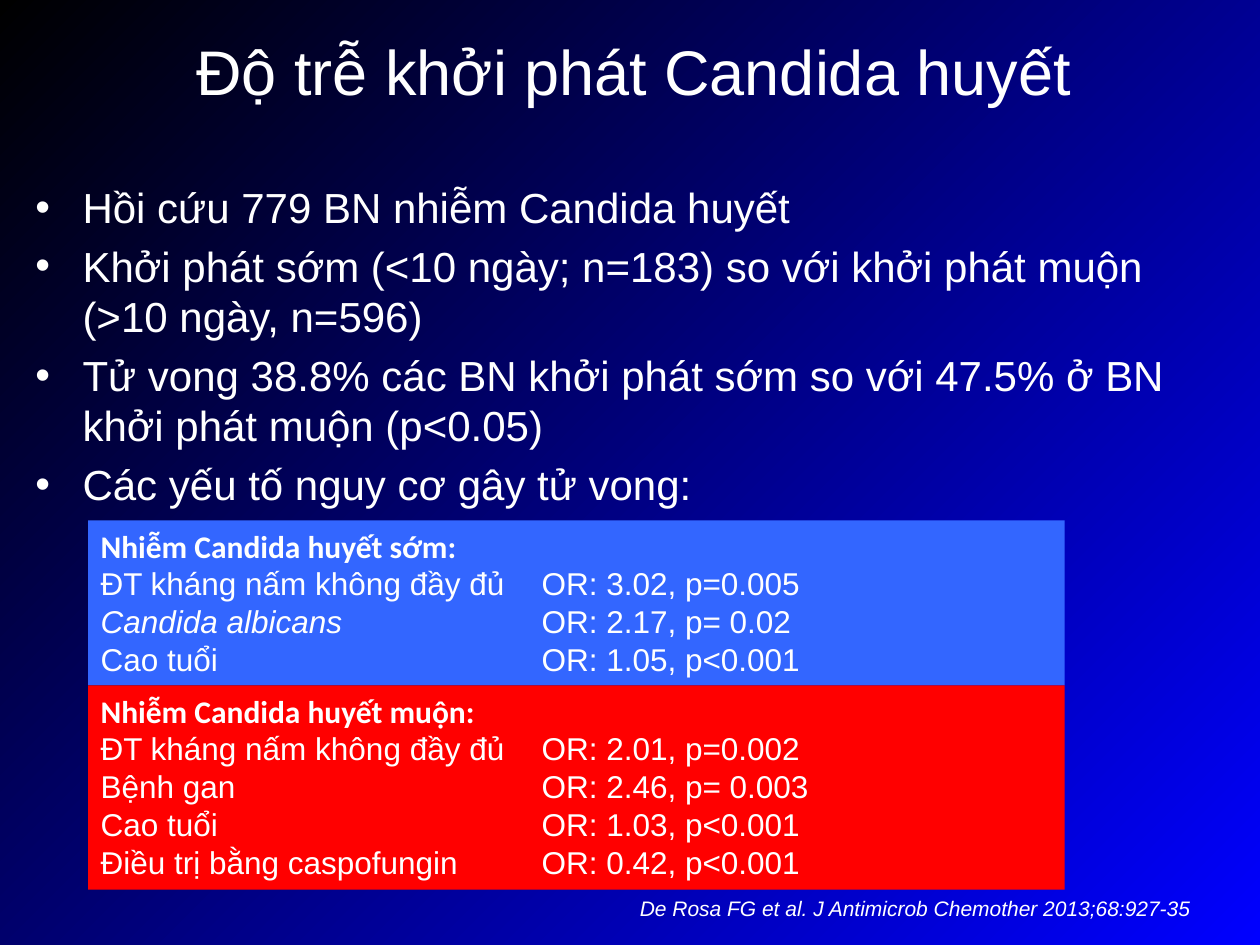
from dataclasses import dataclass

from lxml.etree import SubElement
from pptx import Presentation
from pptx.dml.color import RGBColor
from pptx.enum.shapes import MSO_SHAPE
from pptx.enum.text import MSO_ANCHOR, MSO_AUTO_SIZE, PP_ALIGN
from pptx.oxml import parse_xml
from pptx.oxml.ns import nsdecls, qn
from pptx.util import Inches, Pt

WIDTH, HEIGHT = 10, 7.5
COLORS = {"text": "FFFFFF", "early": "3366FF", "late": "FF0000",
          "glow": "0000FF", "dark": "000000"}
PANEL_LEFT, PANEL_WIDTH = 0.7, 7.75
PANEL_TOP = 4.13
ODDS_TAB = 3.5


@dataclass
class Factor:
    name: str
    odds: str
    italic: bool = False


@dataclass
class Panel:
    heading: str
    color: str
    height: float
    factors: list[Factor]


FINDINGS = [
    "Hồi cứu 779 BN nhiễm Candida huyết",
    "Khởi phát sớm (<10 ngày; n=183) so với khởi phát muộn (>10 ngày, n=596)",
    "Tử vong 38.8% các BN khởi phát sớm so với 47.5% ở BN khởi phát muộn (p<0.05)",
    "Các yếu tố nguy cơ gây tử vong:",
]
PANELS = [
    Panel("Nhiễm Candida huyết sớm:", "early", 1.31, [
        Factor("ĐT kháng nấm không đầy đủ", "OR: 3.02, p=0.005"),
        Factor("Candida albicans", "OR: 2.17, p= 0.02", italic=True),
        Factor("Cao tuổi", "OR: 1.05, p<0.001"),
    ]),
    Panel("Nhiễm Candida huyết muộn:", "late", 1.62, [
        Factor("ĐT kháng nấm không đầy đủ", "OR: 2.01, p=0.002"),
        Factor("Bệnh gan", "OR: 2.46, p= 0.003"),
        Factor("Cao tuổi", "OR: 1.03, p<0.001"),
        Factor("Điều trị bằng caspofungin", "OR: 0.42, p<0.001"),
    ]),
]


def write(paragraph, text: str, *, size: float = 18, font: str = "Arial",
          bold: bool = False, italic: bool = False) -> None:
    """Append one formatted run to a paragraph."""
    run = paragraph.add_run()
    run.text = text
    run.font.size, run.font.name = Pt(size), font
    run.font.bold, run.font.italic = bold, italic
    run.font.color.rgb = RGBColor.from_string(COLORS["text"])


def place(shape, left: float, top: float, width: float, height: float) -> None:
    shape.left, shape.top = Inches(left), Inches(top)
    shape.width, shape.height = Inches(width), Inches(height)


def paint_background(slide) -> None:
    """Radial gradient centred on the bottom right corner."""
    slide.background.fill.solid()
    properties = slide.background._cSld.bg.bgPr
    properties.replace(properties[0], parse_xml(
        f'<a:gradFill {nsdecls("a")} rotWithShape="0"><a:gsLst>'
        f'<a:gs pos="0"><a:srgbClr val="{COLORS["glow"]}"/></a:gs>'
        f'<a:gs pos="100000"><a:srgbClr val="{COLORS["dark"]}"/></a:gs>'
        '</a:gsLst><a:path path="circle">'
        '<a:fillToRect l="100000" t="100000"/></a:path></a:gradFill>'))


def add_odds_tab(paragraph) -> None:
    tabs = SubElement(paragraph._p.get_or_add_pPr(), qn("a:tabLst"))
    SubElement(tabs, qn("a:tab"), pos=str(Inches(ODDS_TAB)), algn="l")


def draw_panel(slide, panel: Panel, top: float) -> None:
    box = slide.shapes.add_shape(
        MSO_SHAPE.RECTANGLE, Inches(PANEL_LEFT), Inches(top),
        Inches(PANEL_WIDTH), Inches(panel.height))
    box.shadow.inherit = False
    box.fill.solid()
    box.fill.fore_color.rgb = RGBColor.from_string(COLORS[panel.color])
    box.line.fill.background()
    frame = box.text_frame
    frame.word_wrap = True
    frame.vertical_anchor = MSO_ANCHOR.TOP
    heading = frame.paragraphs[0]
    heading.alignment = PP_ALIGN.LEFT
    write(heading, panel.heading, font="Calibri", bold=True)
    for factor in panel.factors:
        row = frame.add_paragraph()
        row.alignment = PP_ALIGN.LEFT
        add_odds_tab(row)
        write(row, factor.name, italic=factor.italic)
        write(row, "\t" + factor.odds)


def main() -> None:
    deck = Presentation()
    deck.slide_width, deck.slide_height = Inches(WIDTH), Inches(HEIGHT)
    slide = deck.slides.add_slide(deck.slide_layouts[1])
    paint_background(slide)

    # Title
    title = slide.shapes.title
    place(title, 0.42, 0.21, 9.22, 0.7)
    title.text_frame.auto_size = MSO_AUTO_SIZE.NONE
    title.text_frame.vertical_anchor = MSO_ANCHOR.MIDDLE
    write(title.text_frame.paragraphs[0], "Độ trễ khởi phát Candida huyết", size=36)

    # Study findings
    body = slide.placeholders[1]
    place(body, 0.18, 1.39, 9.69, 3.31)
    findings = body.text_frame
    findings.auto_size = MSO_AUTO_SIZE.NONE
    for index, finding in enumerate(FINDINGS):
        bullet = findings.add_paragraph() if index else findings.paragraphs[0]
        write(bullet, finding, size=24)

    # Citation
    citation = slide.shapes.add_textbox(
        Inches(4.98), Inches(7.06), Inches(4.66), Inches(0.3))
    citation.text_frame.word_wrap = False
    write(citation.text_frame.paragraphs[0],
          "De Rosa FG et al. J Antimicrob Chemother 2013;68:927-35",
          size=12, italic=True)

    # Risk factors, stacked panels
    top = PANEL_TOP
    for panel in PANELS:
        draw_panel(slide, panel, top)
        top += panel.height

    deck.save("out.pptx")


if __name__ == "__main__":
    main()
